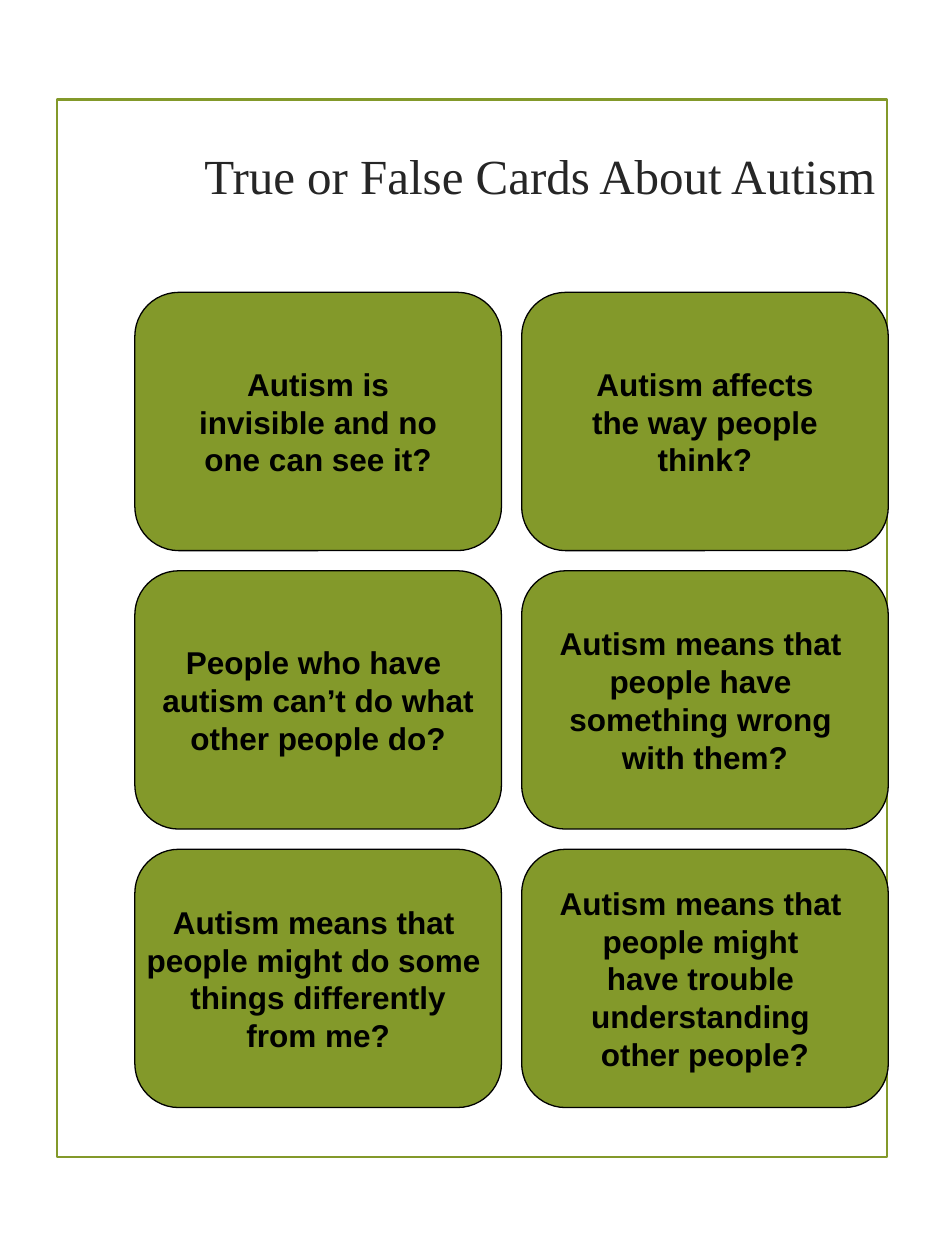
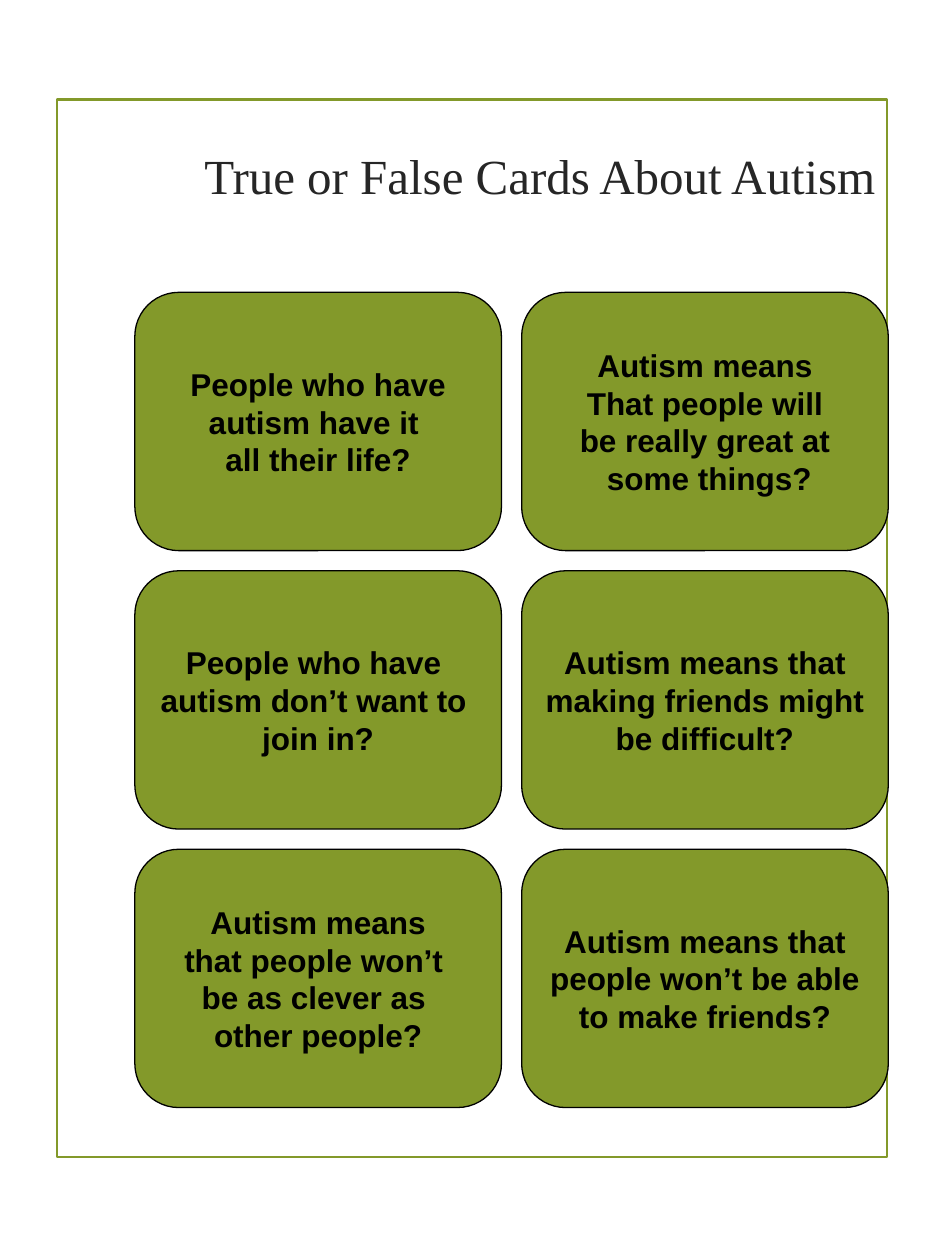
from dataclasses import dataclass

from pptx import Presentation
from pptx.dml.color import RGBColor
from pptx.enum.shapes import MSO_SHAPE
from pptx.enum.text import MSO_ANCHOR, PP_ALIGN
from pptx.util import Inches, Pt

RECTANGLE = MSO_SHAPE.RECTANGLE
ROUNDED = MSO_SHAPE.ROUNDED_RECTANGLE
MIDDLE = MSO_ANCHOR.MIDDLE
CENTER = PP_ALIGN.CENTER

TITLE = "True or False Cards About Autism"

CARD_SETS = [
    [
        ["Autism is", "invisible and no", "one can see it?"],
        ["Autism affects", "the way people", "think?"],
        ["People who have ", "autism can’t do what", "other people do?"],
        ["Autism means that ", "people have ", "something wrong ", "with them?"],
        ["Autism means that ", "people might do some ", "things differently", "from me?"],
        ["Autism means that ", "people might ", "have trouble ", "understanding ", "other people?"],
    ],
    [
        ["People who have", "autism have it ", "all their life?"],
        ["Autism means", "That people will", "be really great at", " some things?"],
        ["People who have ", "autism don’t want to ", "join in?"],
        ["Autism means that", "making friends might", "be difficult?"],
        ["Autism means", "that people won’t ", "be as clever as ", "other people?"],
        ["Autism means that", "people won’t be able", "to make friends?"],
    ],
]

FRAME_AT = (0.45, 0.79, 6.59, 8.39)
TITLE_AT = (1.07, 0.27, 6.43, 2.23)
GRID_LEFT, GRID_TOP = 1.07, 2.32
CARD_WIDTH, CARD_HEIGHT, CARD_GAP = 2.91, 2.05, 0.16
COLUMNS = 2


@dataclass(frozen=True)
class Theme:
    olive: RGBColor = RGBColor.from_string("83992A")
    black: RGBColor = RGBColor.from_string("000000")
    title_color: RGBColor = RGBColor.from_string("262626")
    title_font: str = "Times New Roman"
    card_font: str = "Arial"
    title_size: int = 28
    card_size: int = 18


THEME = Theme()


def inches(*lengths):
    return [Inches(length) for length in lengths]


def style(font, name, size, color, bold=False):
    font.name, font.size, font.bold = name, Pt(size), bold
    font.color.rgb = color


def add_outlined(slide, preset, place, line_color, line_width, fill=None):
    shape = slide.shapes.add_shape(preset, *inches(*place))
    shape.shadow.inherit = False
    shape.line.color.rgb = line_color
    shape.line.width = Pt(line_width)
    if fill is None:
        shape.fill.background()
    else:
        shape.fill.solid()
        shape.fill.fore_color.rgb = fill
    return shape


def set_title(slide):
    title = slide.shapes.title
    title.left, title.top, title.width, title.height = inches(*TITLE_AT)
    title.text_frame.text = TITLE
    title.text_frame.vertical_anchor = MIDDLE
    para = title.text_frame.paragraphs[0]
    para.alignment = CENTER
    style(para.font, THEME.title_font, THEME.title_size, THEME.title_color)


def add_card(slide, index, lines):
    row, column = divmod(index, COLUMNS)
    place = (
        GRID_LEFT + column * (CARD_WIDTH + CARD_GAP),
        GRID_TOP + row * (CARD_HEIGHT + CARD_GAP),
        CARD_WIDTH,
        CARD_HEIGHT,
    )
    card = add_outlined(slide, ROUNDED, place, THEME.black, 0.75, THEME.olive)
    card.adjustments[0] = 0.17
    frame = card.text_frame
    frame.word_wrap = False
    frame.vertical_anchor = MIDDLE
    frame.text = "\n".join(lines)
    for para in frame.paragraphs:
        para.alignment = CENTER
        style(para.font, THEME.card_font, THEME.card_size, THEME.black, bold=True)


def main():
    deck = Presentation()
    deck.slide_width, deck.slide_height = inches(7.5, 10)
    title_only = deck.slide_layouts[5]
    for cards in CARD_SETS:
        slide = deck.slides.add_slide(title_only)
        add_outlined(slide, RECTANGLE, FRAME_AT, THEME.olive, 1.25)
        set_title(slide)
        for index, lines in enumerate(cards):
            add_card(slide, index, lines)
    deck.save("out.pptx")


if __name__ == "__main__":
    main()
